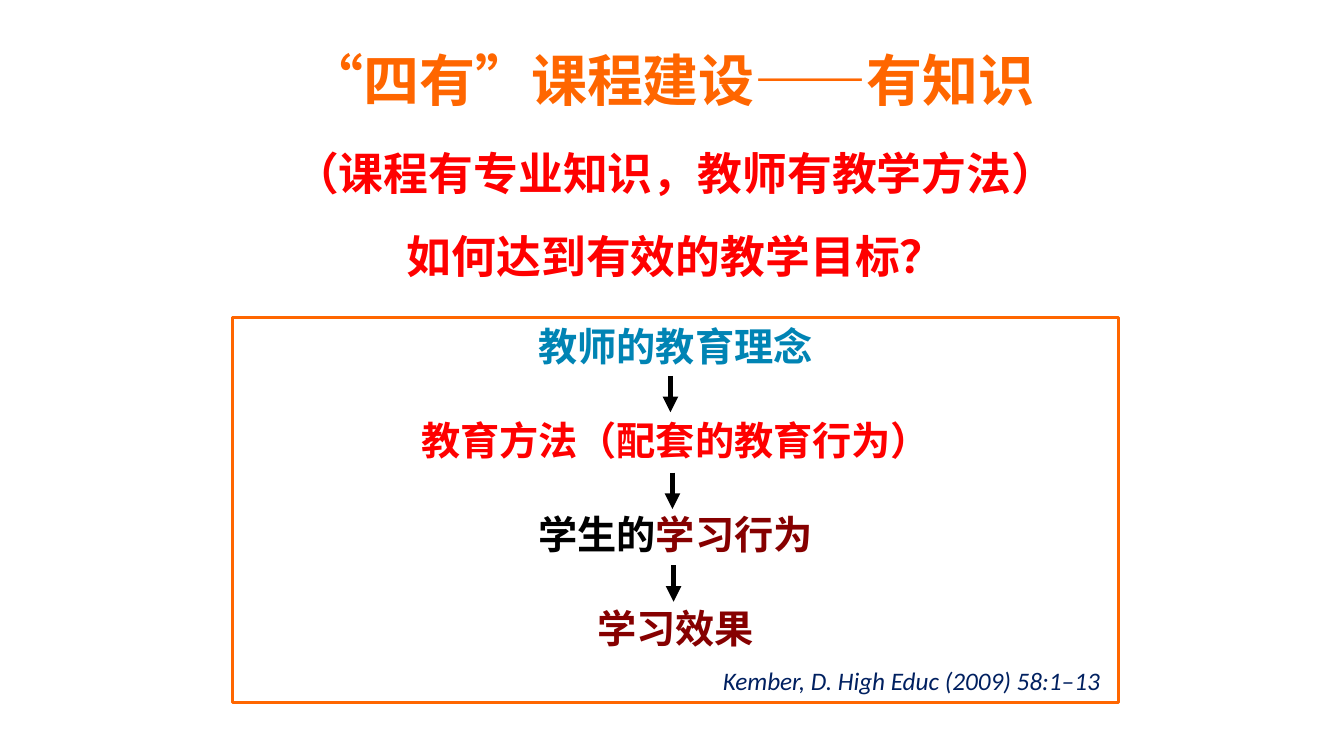
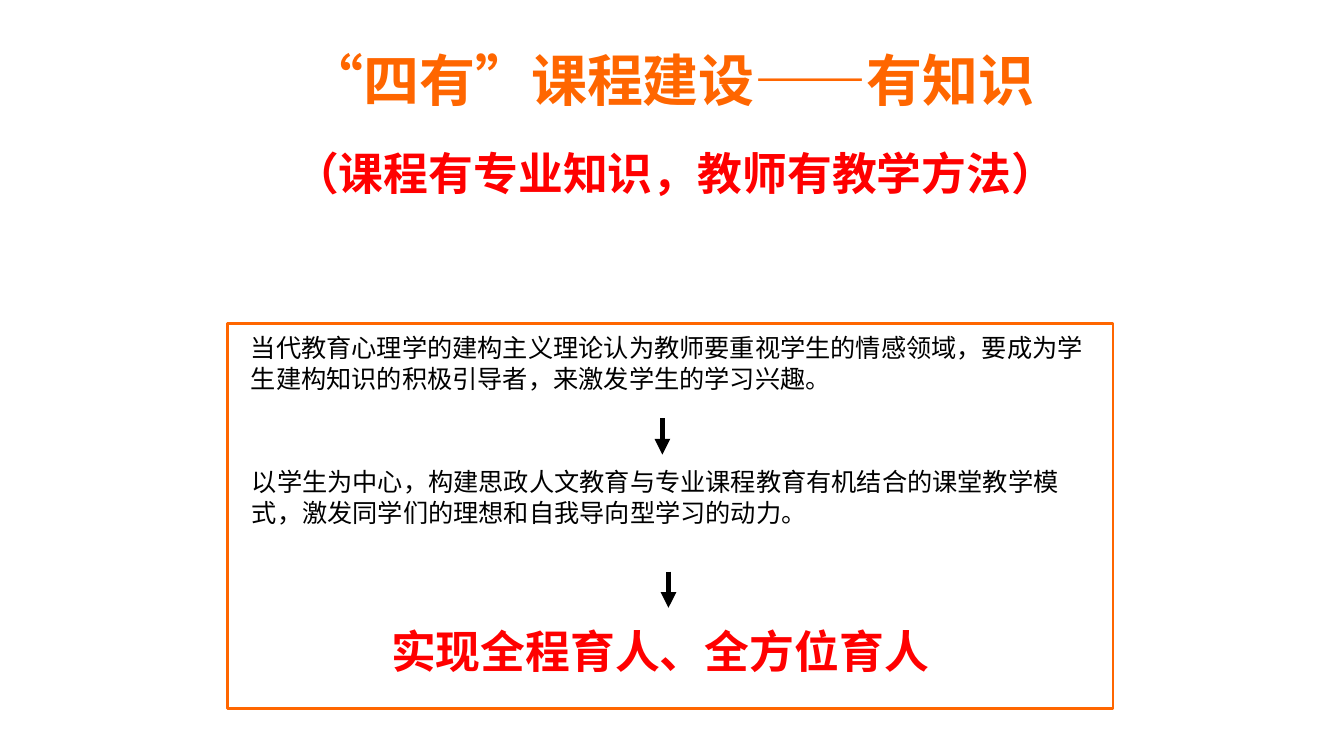
from dataclasses import dataclass

from lxml import etree
from pptx import Presentation
from pptx.dml.color import RGBColor
from pptx.enum import shapes, text
from pptx.oxml.ns import qn
from pptx.util import Inches, Pt

CJK, LATIN = "Noto Sans CJK SC", "Calibri"
ORANGE, RED, BLACK, WHITE = "FF6600", "FF0000", "000000", "FFFFFF"
BLUE, MAROON, NAVY = "0084B4", "860000", "002060"
CENTER, LEFT = text.PP_ALIGN.CENTER, text.PP_ALIGN.LEFT
ARROW_LENGTH = 0.36
PANEL_SIZE = (8.78, 3.82)


@dataclass(frozen=True)
class Style:
    size: float
    color: str = BLACK
    font: str = CJK
    bold: bool = False
    italic: bool = False
    align: text.PP_ALIGN = LEFT
    spacing: float = 1.0


@dataclass(frozen=True)
class Label:
    box: tuple[float, float, float, float]
    words: str
    style: Style
    wrap: bool = False


@dataclass(frozen=True)
class Arrow:
    x: float
    y: float


TITLE = Style(40, ORANGE, bold=True, align=CENTER, spacing=1.25)
HEADING = Style(32, RED, bold=True, align=CENTER)
STEP = Style(28, bold=True, align=CENTER)
BODY = Style(18, font=LATIN)
CITATION = Style(18, NAVY, LATIN, italic=True)
CONCLUSION = Style(32, RED, LATIN, bold=True)

HEADER = [
    Label((2.82, 0.24, 7.67, 0.78), "“四有”课程建设——有知识", TITLE, True),
    Label((2.77, 1.4, 7.86, 0.64), "（课程有专业知识，教师有教学方法）", HEADING),
]
STEPS = [
    [("教师的教育理念", BLUE)],
    [("教育方法（配套的教育行为）", RED)],
    [("学生的", BLACK), ("学习行为", MAROON)],
    [("学习效果", MAROON)],
]


def rgb(value: str) -> RGBColor:
    return RGBColor.from_string(value)


def format_paragraph(p, style: Style) -> None:
    p.alignment = style.align
    p.line_spacing = style.spacing
    p.font.name = style.font
    p.font.size = Pt(style.size)
    p.font.bold = style.bold
    p.font.italic = style.italic


def add_label(s, label: Label) -> None:
    sp = s.shapes.add_textbox(*map(Inches, label.box))
    tf = sp.text_frame
    tf.word_wrap = label.wrap
    p = tf.paragraphs[0]
    p.text = label.words
    format_paragraph(p, label.style)
    p.font.color.rgb = rgb(label.style.color)


def add_panel(s, left: float, top: float):
    sp = s.shapes.add_shape(
        shapes.MSO_SHAPE.RECTANGLE, *map(Inches, (left, top, *PANEL_SIZE)))
    sp.shadow.inherit = False
    sp.fill.solid()
    sp.fill.fore_color.rgb = rgb(WHITE)
    sp.line.color.rgb = rgb(ORANGE)
    sp.line.width = Pt(2)
    return sp


def add_steps(panel) -> None:
    tf = panel.text_frame
    tf.vertical_anchor = text.MSO_ANCHOR.TOP
    for i, parts in enumerate(STEPS):
        p = tf.add_paragraph() if i else tf.paragraphs[0]
        format_paragraph(p, STEP)
        if i:
            p.space_before = Pt(33.6)
        for words, color in parts:
            r = p.add_run()
            r.text = words
            r.font.color.rgb = rgb(color)


def add_arrow(s, arrow: Arrow) -> None:
    x = Inches(arrow.x)
    line = s.shapes.add_connector(
        shapes.MSO_CONNECTOR.STRAIGHT, x, Inches(arrow.y),
        x, Inches(arrow.y + ARROW_LENGTH))
    line.line.color.rgb = rgb(BLACK)
    line.line.width = Pt(3.75)
    etree.SubElement(line.line._get_or_add_ln(), qn("a:tailEnd"), type="triangle")
    etree.SubElement(line._element.spPr, qn("a:effectLst"))


def add_slide(prs, panel_at: tuple[float, float], arrows: list[Arrow],
              labels: list[Label]):
    s = prs.slides.add_slide(prs.slide_layouts[6])
    panel = add_panel(s, *panel_at)
    for arrow in arrows:
        add_arrow(s, arrow)
    for label in HEADER + labels:
        add_label(s, label)
    return panel


def main() -> None:
    prs = Presentation()
    prs.slide_width, prs.slide_height = Inches(13.33), Inches(7.5)

    panel = add_slide(
        prs, (2.31, 3.15),
        [Arrow(6.65, 3.73), Arrow(6.67, 4.69), Arrow(6.68, 5.61)],
        [Label((3.91, 2.22, 5.59, 0.64), "如何达到有效的教学目标？", HEADING),
         Label((7.07, 6.55, 3.99, 0.4), "Kember, D. High Educ (2009) 58:1–13", CITATION)])
    add_steps(panel)

    add_slide(
        prs, (2.26, 3.21),
        [Arrow(6.57, 4.15), Arrow(6.63, 5.67)],
        [Label((2.39, 3.25, 8.51, 0.71),
               "当代教育心理学的建构主义理论认为教师要重视学生的情感领域，"
               "要成为学生建构知识的积极引导者，来激发学生的学习兴趣。", BODY, True),
         Label((2.4, 4.58, 8.42, 0.71),
               "以学生为中心，构建思政人文教育与专业课程教育有机结合的课堂教学模式，"
               "激发同学们的理想和自我导向型学习的动力。", BODY, True),
         Label((3.78, 6.14, 5.61, 0.64), "实现全程育人、全方位育人", CONCLUSION)])

    prs.save("out.pptx")


if __name__ == "__main__":
    main()
